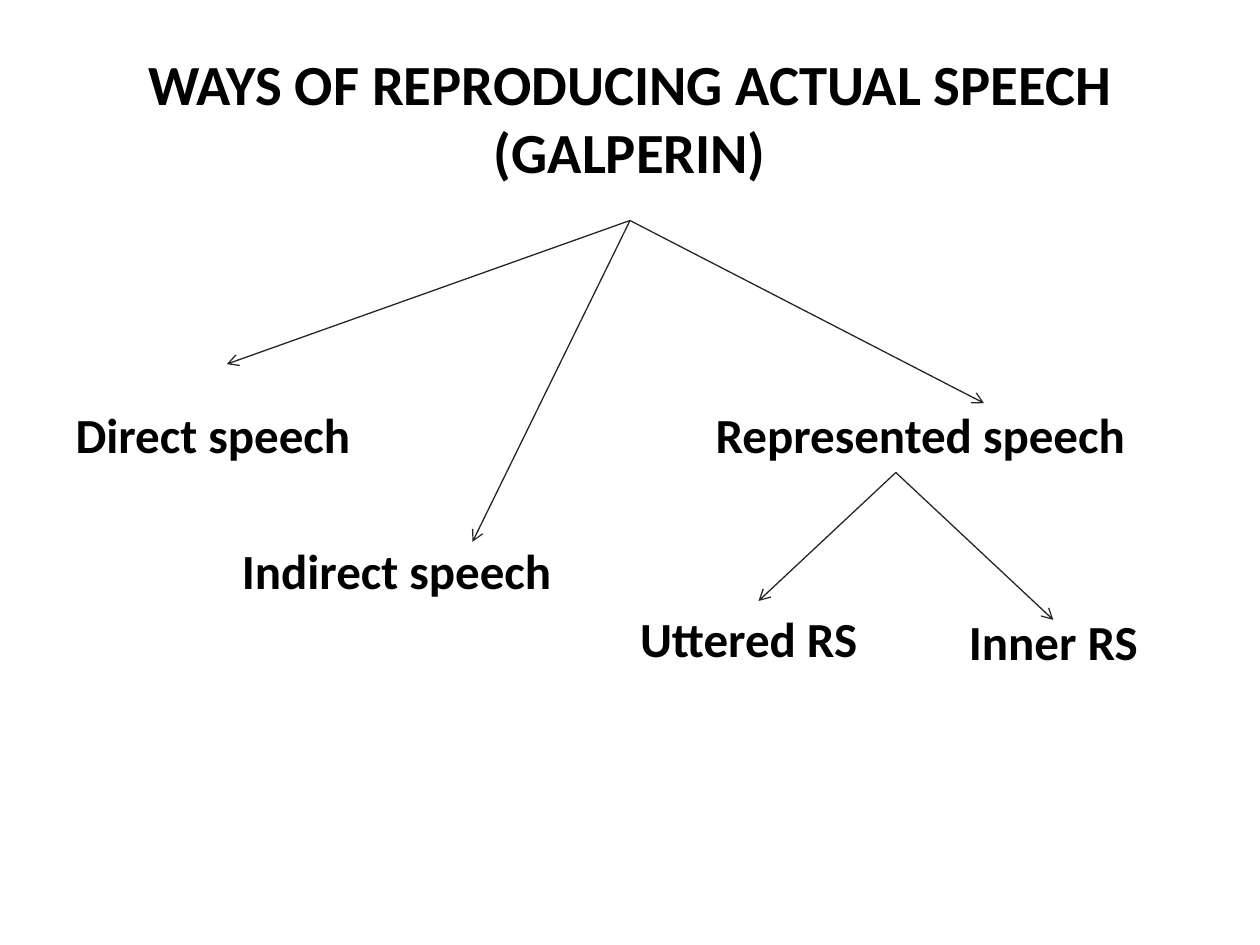
from lxml.etree import SubElement
from pptx import Presentation
from pptx.dml.color import RGBColor
from pptx.enum.shapes import MSO_CONNECTOR
from pptx.enum.text import MSO_ANCHOR, MSO_AUTO_SIZE, PP_ALIGN
from pptx.oxml.ns import qn
from pptx.util import Inches, Pt


def color(hex_string):
    return RGBColor.from_string(hex_string)


def write(paragraph, text, *, font, size, fill, bold=True, align=PP_ALIGN.LEFT, before=0):
    paragraph.alignment = align
    paragraph.space_before = Pt(before)
    run = paragraph.add_run()
    run.text = text
    run.font.name = font
    run.font.size = Pt(size)
    run.font.bold = bold
    run.font.color.rgb = color(fill)


def indent_without_bullet(paragraph, inches):
    properties = paragraph._p.get_or_add_pPr()
    properties.set("marL", str(Inches(inches)))
    properties.set("indent", "0")
    SubElement(properties, qn("a:buNone"))


class DiagramSlide:
    FONT = "Calibri"
    TEXT = "000000"
    LINE = "262626"
    TITLE_SIZE = 32.4
    BODY_SIZE = 28

    def __init__(self, presentation):
        self.slide = presentation.slides.add_slide(presentation.slide_layouts[1])

    def place(self, shape, left, top, width, height, anchor=MSO_ANCHOR.TOP):
        shape.left, shape.top = Inches(left), Inches(top)
        shape.width, shape.height = Inches(width), Inches(height)
        frame = shape.text_frame
        frame.word_wrap = True
        frame.auto_size = MSO_AUTO_SIZE.NONE
        frame.vertical_anchor = anchor
        return frame

    def title(self, text, *box):
        frame = self.place(self.slide.shapes.title, *box, anchor=MSO_ANCHOR.MIDDLE)
        write(frame.paragraphs[0], text, font=self.FONT, size=self.TITLE_SIZE,
              fill=self.TEXT, align=PP_ALIGN.CENTER)

    def body(self, rows, *box, margin_top):
        """Write rows of (text, space before in points, indent in inches)."""
        frame = self.place(self.slide.placeholders[1], *box)
        frame.margin_top = Inches(margin_top)
        for index, (text, before, indent) in enumerate(rows):
            paragraph = frame.add_paragraph() if index else frame.paragraphs[0]
            write(paragraph, text, font=self.FONT, size=self.BODY_SIZE,
                  fill=self.TEXT, before=before)
            indent_without_bullet(paragraph, indent)

    def label(self, text, *box):
        frame = self.place(self.slide.shapes.add_textbox(0, 0, 0, 0), *box)
        frame.margin_left = frame.margin_right = 0
        frame.margin_top = frame.margin_bottom = 0
        write(frame.paragraphs[0], text, font=self.FONT, size=self.BODY_SIZE,
              fill=self.TEXT)

    def arrow(self, start, end):
        points = [Inches(value) for value in (*start, *end)]
        connector = self.slide.shapes.add_connector(MSO_CONNECTOR.STRAIGHT, *points)
        connector.line.color.rgb = color(self.LINE)
        connector.line.width = Pt(0.75)
        SubElement(connector.line._get_or_add_ln(), qn("a:tailEnd"), type="arrow")
        SubElement(connector._element.spPr, qn("a:effectLst"))

    def branches(self, start, ends):
        for end in ends:
            self.arrow(start, end)


def main():
    presentation = Presentation()
    presentation.slide_width, presentation.slide_height = Inches(10), Inches(7.5)

    diagram = DiagramSlide(presentation)
    diagram.title("WAYS OF REPRODUCING ACTUAL SPEECH (GALPERIN)", 0.5, 0.3, 9, 1.25)
    speech_types = [
        ("Direct speech", 0, 0),
        ("Indirect speech", 44, 1.32),
        ("Uttered RS", 5.5, 4.48),
    ]
    diagram.body(speech_types, 0.5, 1.75, 9, 4.95, margin_top=1.46)
    diagram.label("Represented speech", 5.68, 3.21, 3.6, 0.5)
    diagram.label("Inner RS", 7.69, 4.85, 1.6, 0.5)
    diagram.branches((5, 1.75), [(1.8, 2.89), (3.75, 4.3), (7.81, 3.2)])
    diagram.branches((7.11, 3.75), [(6.02, 4.77), (8.36, 4.92)])

    presentation.save("out.pptx")


if __name__ == "__main__":
    main()
